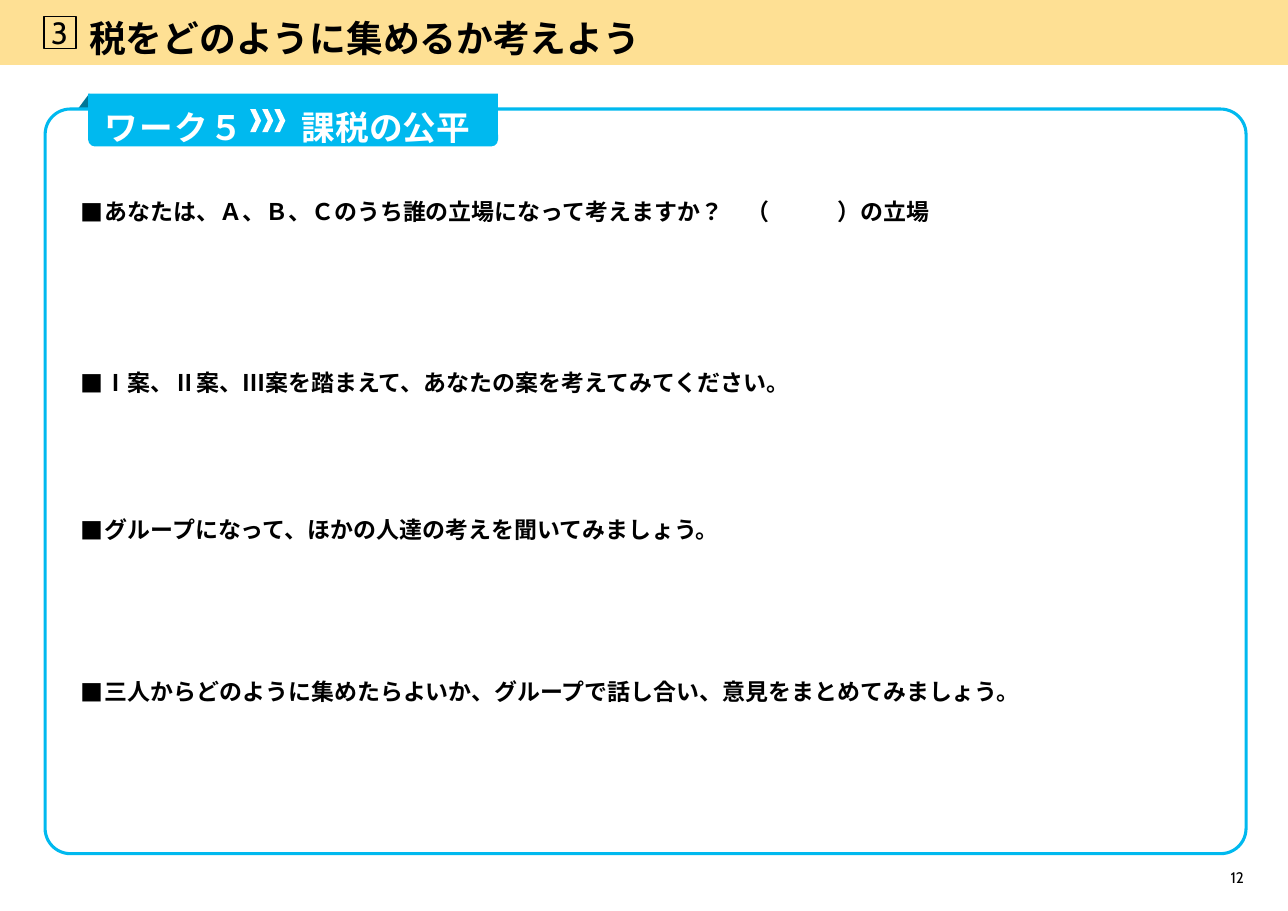
import pptx
import pptx.util
import pptx.dml.color
import pptx.enum.lang
import pptx.enum.shapes
import pptx.enum.text
import pptx.oxml.ns
import lxml.etree

Inches = pptx.util.Inches
Pt = pptx.util.Pt
SHAPE = pptx.enum.shapes.MSO_SHAPE
ALIGN = pptx.enum.text.PP_ALIGN


class Theme:
    black, white = "000000", "FFFFFF"
    band, cyan, fold = "FEE094", "00B9EF", "007696"
    latin, japanese = "Cabin", "Noto Sans CJK JP"
    line_factor = 1.27
    title = {"size": Pt(24), "bold": True, "name": latin}
    number = {"size": Pt(20), "bold": False, "name": latin}
    page = {"size": Pt(10), "bold": False, "name": latin}
    heading = {"size": Pt(22), "bold": True, "name": japanese}
    question = {"size": Pt(15), "bold": True, "name": japanese}


QUESTIONS = [  # distance from the previous question, wording
    (0, "あなたは、Ａ、Ｂ、Ｃのうち誰の立場になって考えますか？　（　　　）の立場"),
    (1.56, "Ⅰ案、Ⅱ案、Ⅲ案を踏まえて、あなたの案を考えてみてください。"),
    (1.33, "グループになって、ほかの人達の考えを聞いてみましょう。"),
    (1.47, "三人からどのように集めたらよいか、グループで話し合い、意見をまとめてみましょう。"),
]


def set_values(target, values):
    for name, value in values.items():
        setattr(target, name, value)


def add_element(parent, tag, **attributes):
    name = pptx.oxml.ns.qn(tag)
    return lxml.etree.SubElement(parent, name, attributes)


def move(shape, box):
    names = ("left", "top", "width", "height")
    set_values(shape, dict(zip(names, map(Inches, box))))


def draw(slide, kind, box, fill=None, line=None, width=1, corner=None):
    shape = slide.shapes.add_shape(kind, *map(Inches, box))
    shape.shadow.inherit = False
    if fill:
        shape.fill.solid()
        shape.fill.fore_color.rgb = pptx.dml.color.RGBColor.from_string(fill)
    else:
        shape.fill.background()
    if line:
        shape.line.color.rgb = pptx.dml.color.RGBColor.from_string(line)
        shape.line.width = Pt(width)
    else:
        shape.line.fill.background()
    if corner is not None:
        shape.adjustments[0] = corner
    return shape


def prepare_frame(frame, wrap):
    set_values(frame, {
        "margin_left": 0, "margin_right": 0, "margin_top": 0, "margin_bottom": 0,
        "word_wrap": wrap,
        "auto_size": pptx.enum.text.MSO_AUTO_SIZE.NONE,
        "vertical_anchor": pptx.enum.text.MSO_ANCHOR.TOP,
    })


def write(paragraph, text, style, color=Theme.black, align=ALIGN.LEFT, spacing=None):
    paragraph.alignment = align
    run = paragraph.add_run()
    run.text = text
    set_values(run.font, style)
    run.font.color.rgb = pptx.dml.color.RGBColor.from_string(color)
    if text.isascii():
        return
    # Japanese text: East Asian font and an even line height
    run.font.language_id = pptx.enum.lang.MSO_LANGUAGE_ID.JAPANESE
    paragraph.line_spacing = Pt(round(style["size"].pt * Theme.line_factor))
    properties = run.font._element
    add_element(properties, "a:ea", typeface=Theme.japanese)
    if spacing:
        properties.set("spc", str(spacing * 100))


def add_label(slide, box, text, style, **options):
    frame = slide.shapes.add_textbox(*map(Inches, box)).text_frame
    prepare_frame(frame, False)
    write(frame.paragraphs[0], text, style, **options)


def use_placeholder(slide, placeholder, box):
    slide.shapes._spTree.append(placeholder._element)  # bring to front
    move(placeholder, box)
    prepare_frame(placeholder.text_frame, True)
    return placeholder.text_frame


def build_header(slide, box):
    left, top, width, height = box
    draw(slide, SHAPE.RECTANGLE, box, fill=Theme.band)
    # Boxed chapter number
    draw(slide, SHAPE.RECTANGLE, (left + 0.4, top + 0.15, 0.29, 0.29), line=Theme.black)
    add_label(slide, (left + 0.42, top + 0.13, 0.24, 0.34), "3", Theme.number,
              align=ALIGN.CENTER)
    # Title
    frame = use_placeholder(slide, slide.shapes.title,
                            (left + 0.81, top + 0.13, width - 1.06, 0.34))
    write(frame.paragraphs[0], "税をどのように集めるか考えよう", Theme.title)


def build_tab(slide, box):
    left, top, width, height = box
    draw(slide, SHAPE.RECTANGLE, (left, top, width, 0.36), fill=Theme.cyan)
    draw(slide, SHAPE.ROUNDED_RECTANGLE, (left, top + height - 0.26, width, 0.26),
         fill=Theme.cyan, corner=0.24)
    # Chevrons between the two labels
    for index in range(3):
        draw(slide, SHAPE.CHEVRON, (left + 1.47 + 0.11 * index, top + 0.14, 0.1, 0.21),
             fill=Theme.white)
    add_label(slide, (left + 0.15, top + 0.1, 1.24, 0.29), "ワーク５", Theme.heading,
              color=Theme.white, spacing=1)
    add_label(slide, (left + 1.94, top + 0.1, 1.71, 0.29), "課税の公平", Theme.heading,
              color=Theme.white)


def build_questions(slide, box):
    frame = use_placeholder(slide, slide.placeholders[1], box)
    for index, (distance, text) in enumerate(QUESTIONS):
        paragraph = frame.add_paragraph() if index else frame.paragraphs[0]
        write(paragraph, text, Theme.question)
        gap = Inches(distance) - paragraph.line_spacing if index else 0
        set_values(paragraph, {"space_before": Pt(round(gap / Pt(1))), "space_after": Pt(0)})
        properties = paragraph._p.get_or_add_pPr()
        properties.set("marL", str(Inches(0.22)))
        properties.set("indent", str(-Inches(0.22)))
        add_element(properties, "a:buFont", typeface=Theme.japanese)
        add_element(properties, "a:buChar", char="■")


def build_worksheet(slide, box):
    left, top, width, height = box
    # Folded corner behind the frame
    fold = draw(slide, SHAPE.ISOSCELES_TRIANGLE, (left + 0.18, top - 0.04, 0.32, 0.12),
                fill=Theme.fold)
    fold.rotation = 270
    draw(slide, SHAPE.ROUNDED_RECTANGLE, box, fill=Theme.white, line=Theme.cyan,
         width=2, corner=0.034)
    build_tab(slide, (left + 0.39, top - 0.14, 3.72, 0.48))
    build_questions(slide, (left + 0.32, top + 0.79, width - 0.64, height - 1.1))


def main():
    presentation = pptx.Presentation()
    set_values(presentation, {"slide_width": Inches(11.69), "slide_height": Inches(8.27)})
    slide = presentation.slides.add_slide(presentation.slide_layouts[1])
    build_header(slide, (0, 0, 11.69, 0.59))
    build_worksheet(slide, (0.41, 0.99, 10.9, 6.76))
    add_label(slide, (11.14, 7.88, 0.15, 0.17), "12", Theme.page, align=ALIGN.RIGHT)
    presentation.save("out.pptx")


if __name__ == "__main__":
    main()
